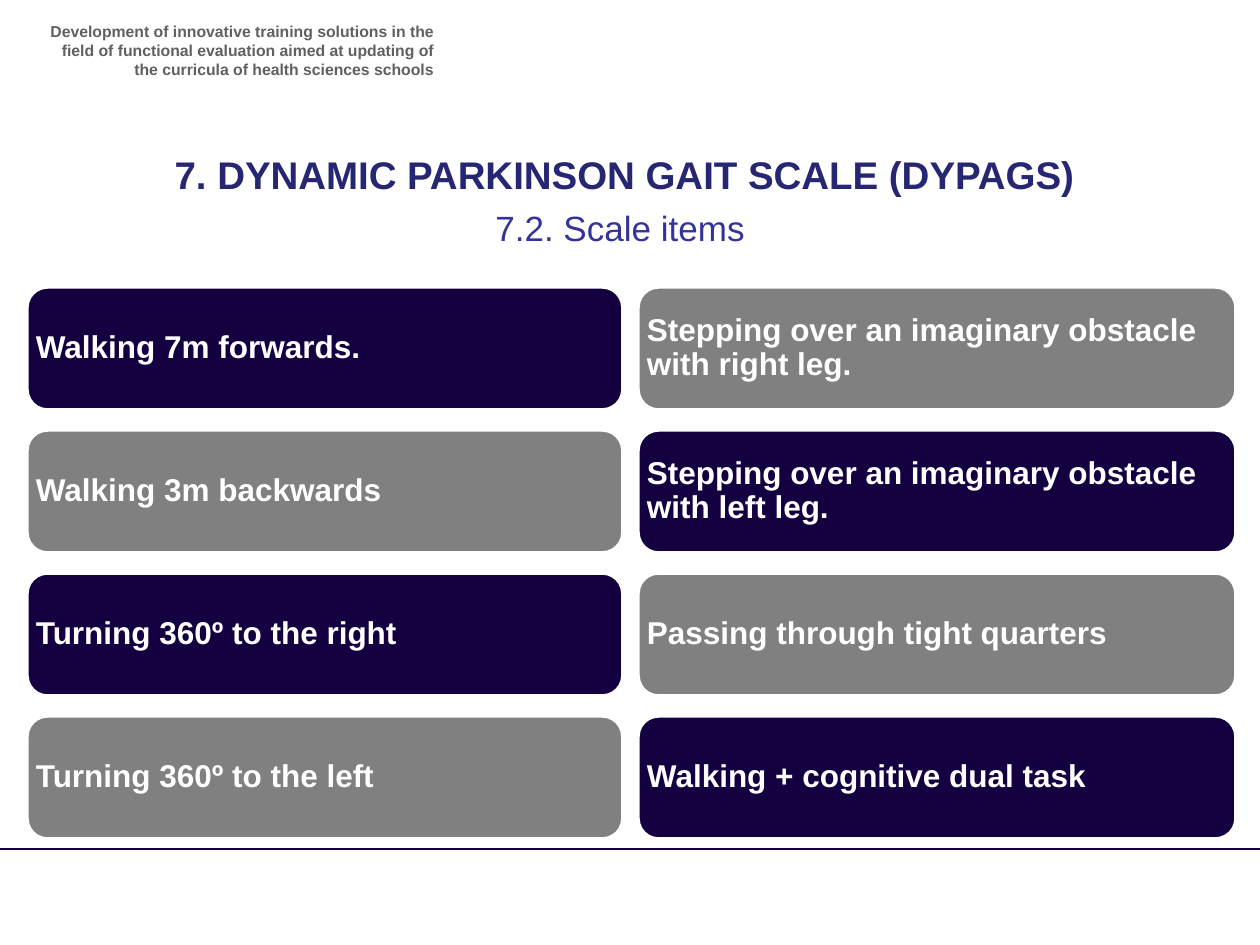
from pptx import Presentation
from pptx.dml.color import RGBColor as RGB
from pptx.enum.shapes import MSO_CONNECTOR as CON, MSO_SHAPE as SHP
from pptx.enum.text import MSO_ANCHOR as ANC, PP_ALIGN as AL
from pptx.oxml.ns import qn
from pptx.util import Pt
from lxml import etree

PX = 914400 // 126
HUES = {"navy": "140041", "gray": "808080", "white": "FFFFFF",
        "head": "606060", "title": "262673", "sub": "333399"}


def hue(name):
    return RGB.from_string(HUES[name])


def write(frame, text, size, color, bold, align):
    frame.word_wrap = True
    par = frame.paragraphs[0]
    par.text = text
    par.alignment = align
    font = par.font
    font.name, font.size, font.bold = "Arial", Pt(size), bold
    font.color.rgb = hue(color)
    return par


prs = Presentation()
prs.slide_width, prs.slide_height = 1260 * PX, 945 * PX
shapes = prs.slides.add_slide(prs.slide_layouts[6]).shapes

# Footer rule
rule = shapes.add_connector(CON.STRAIGHT, -6 * PX, 849 * PX, 1260 * PX, 849 * PX)
rule.line.color.rgb = hue("navy")
rule.line.width = Pt(1)
etree.SubElement(rule._element.spPr, qn("a:effectLst"))

# Header, title and subtitle
heads = [
    (35, 16, 411, 59, "Development of innovative training solutions in the "
     "ﬁeld of functional evaluation aimed at updating of the curricula of "
     "health sciences schools", 9, "head", True, AL.RIGHT),
    (84, 145, 1081, 59, "7. DYNAMIC PARKINSON GAIT SCALE (DYPAGS)",
     22, "title", True, AL.CENTER),
    (483, 200, 295, 97, "7.2. Scale items", 20, "sub", False, AL.LEFT),
]
for x, y, w, h, *look in heads:
    box = shapes.add_textbox(x * PX, y * PX, w * PX, h * PX)
    write(box.text_frame, *look)

# Scale items: two columns of cards in alternating colours
cols = [
    (27, 596, ["Walking 7m forwards.", "Walking 3m backwards",
               "Turning 360º to the right", "Turning 360º to the left"]),
    (638, 598, ["Stepping over an imaginary obstacle with right leg.",
                "Stepping over an imaginary obstacle with left leg.",
                "Passing through tight quarters",
                "Walking + cognitive dual task"]),
]
for col, (x, w, items) in enumerate(cols):
    for row, item in enumerate(items):
        card = shapes.add_shape(SHP.ROUNDED_RECTANGLE, x * PX,
                                (287 + 143 * row) * PX, w * PX, 123 * PX)
        card.shadow.inherit = False
        card.fill.solid()
        card.fill.fore_color.rgb = hue(("navy", "gray")[(col + row) % 2])
        card.line.color.rgb = hue("white")
        card.line.width = Pt(2)
        frame = card.text_frame
        frame.margin_left = frame.margin_right = 3 * PX
        frame.margin_top = frame.margin_bottom = 3 * PX
        frame.vertical_anchor = ANC.MIDDLE
        par = write(frame, item, 18, "white", True, AL.LEFT)
        par.line_spacing = 0.9

prs.save("out.pptx")
